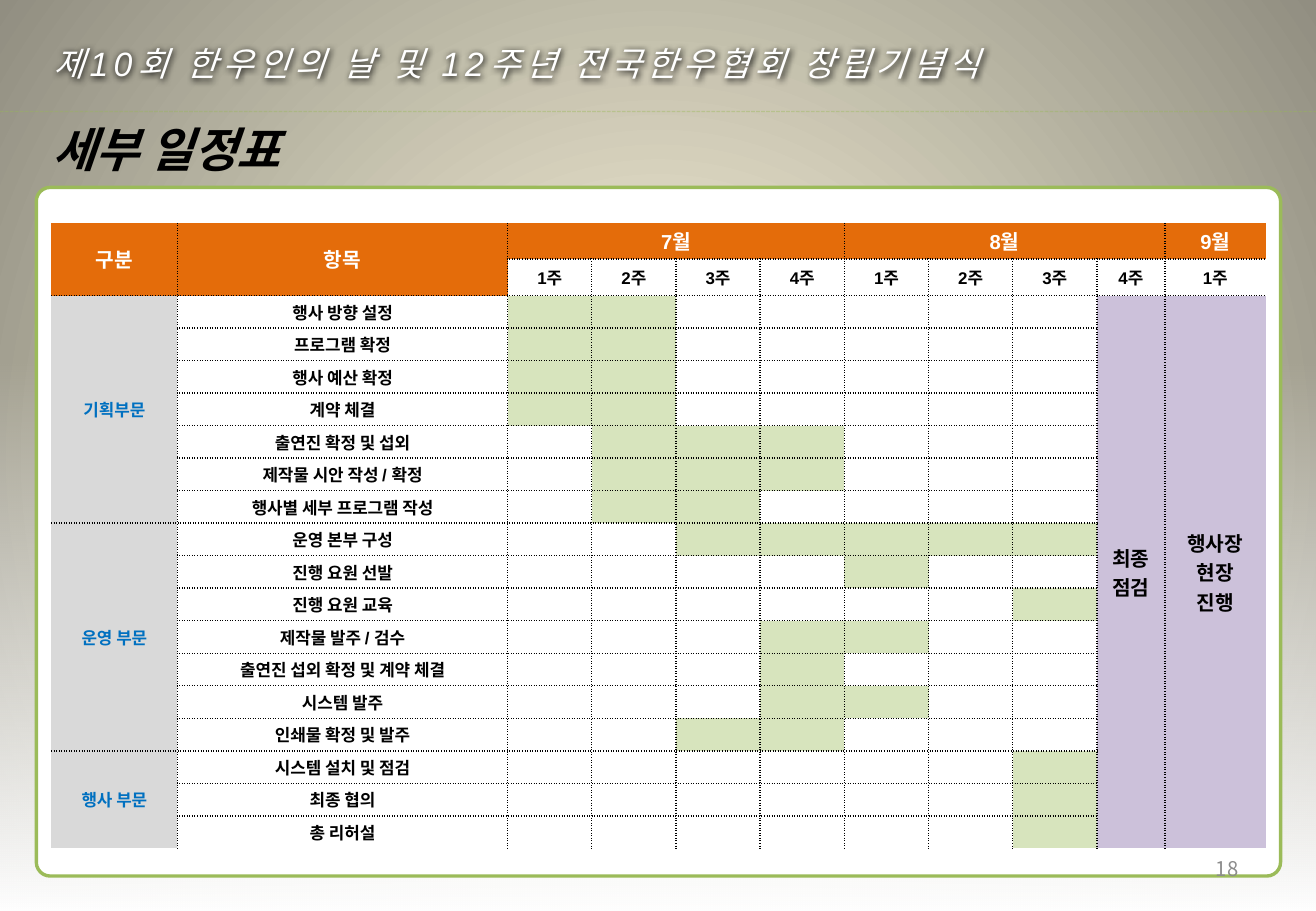
import pptx
import pptx.chart.data
import pptx.dml.color
import pptx.enum.dml
import pptx.enum.shapes
import pptx.enum.text
import pptx.oxml
import pptx.oxml.ns
import pptx.oxml.xmlchemy
import pptx.util

Cm = pptx.util.Cm
Pt = pptx.util.Pt
RGBColor = pptx.dml.color.RGBColor
qn = pptx.oxml.ns.qn
NAMESPACE = pptx.oxml.ns.nsdecls("a")
ALIGN = pptx.enum.text.PP_ALIGN
MIDDLE = pptx.enum.text.MSO_ANCHOR.MIDDLE
PRESET = pptx.enum.shapes.MSO_SHAPE

BLACK = RGBColor(0x00, 0x00, 0x00)
WHITE = RGBColor(0xFF, 0xFF, 0xFF)
ORANGE = RGBColor(0xE4, 0x6C, 0x0A)
GREEN = RGBColor(0x9B, 0xBB, 0x59)
RULE_GREEN = RGBColor(0x98, 0xB9, 0x55)
LIGHT_GREEN = RGBColor(0xD7, 0xE4, 0xBD)
LILAC = RGBColor(0xCC, 0xC1, 0xDA)
LIGHT_GREY = RGBColor(0xD9, 0xD9, 0xD9)
GREY = RGBColor(0x8C, 0x8C, 0x8C)
BLUE = RGBColor(0x00, 0x70, 0xC0)
CREAM = RGBColor(0xFC, 0xF7, 0xDD)
TAUPE = RGBColor(0x91, 0x8E, 0x81)


def write_text(frame, text, color, size, align, name="Arial", **font_values):
    """Fill a text frame, one paragraph per line of text."""
    frame.text = text
    values = {"size": Pt(size), "name": name, **font_values}
    for paragraph in frame.paragraphs:
        paragraph.alignment = align
        for run in paragraph.runs:
            for key, value in values.items():
                setattr(run.font, key, value)
            run.font.color.rgb = color
            east_asian = pptx.oxml.parse_xml(f'<a:ea {NAMESPACE} typeface="Noto Sans CJK KR"/>')
            run.font._element.find(qn("a:latin")).addnext(east_asian)


def apply_gradient(fill, parent, start, end, end_alpha, direction):
    fill.solid()
    gradient = pptx.oxml.parse_xml(
        f'<a:gradFill {NAMESPACE} rotWithShape="1"><a:gsLst>'
        f'<a:gs pos="0"><a:srgbClr val="{start}"/></a:gs>'
        f'<a:gs pos="100000"><a:srgbClr val="{end}"><a:alpha val="{end_alpha}"/></a:srgbClr></a:gs>'
        f"</a:gsLst>{direction}</a:gradFill>")
    parent.replace(parent.find(qn("a:solidFill")), gradient)


presentation = pptx.Presentation()
presentation.slide_width = Cm(27.51)
presentation.slide_height = Cm(19.05)
slide = presentation.slides.add_slide(presentation.slide_layouts[6])
shapes = slide.shapes

# Background, rule and white panel
background_fill = slide.background.fill
background_fill.solid()
apply_gradient(background_fill, slide._element.find(".//" + qn("p:bgPr")), CREAM, TAUPE, 100000,
               '<a:path path="circle"><a:fillToRect l="50000" t="50000" r="50000" b="50000"/></a:path>')

rule = shapes.add_connector(pptx.enum.shapes.MSO_CONNECTOR.STRAIGHT, 0, Cm(2.33), Cm(27.51), Cm(2.33))
rule.line.color.rgb = RULE_GREEN
rule.line.width = Pt(0.75)
rule.line.dash_style = pptx.enum.dml.MSO_LINE.SQUARE_DOT
rule_properties = rule._element.spPr
rule_properties.append(pptx.oxml.parse_xml(f"<a:effectLst {NAMESPACE}/>"))
rule_properties.find(".//" + qn("a:srgbClr")).append(
    pptx.oxml.parse_xml(f'<a:alpha {NAMESPACE} val="40000"/>'))

fade = shapes.add_shape(PRESET.RECTANGLE, 0, Cm(7.52), Cm(27.51), Cm(11.53))
fade.shadow.inherit = False
fade.line.fill.background()
apply_gradient(fade.fill, fade._element.spPr, WHITE, WHITE, 0, '<a:lin ang="16200000" scaled="0"/>')

panel = shapes.add_shape(PRESET.ROUNDED_RECTANGLE, Cm(0.76), Cm(3.92), Cm(26.01), Cm(14.4))
panel.shadow.inherit = False
panel.adjustments[0] = 0.02
panel.fill.solid()
panel.fill.fore_color.rgb = WHITE
panel.line.color.rgb = GREEN
panel.line.width = Pt(2)

# Headings and page number
heading = shapes.add_textbox(Cm(0.84), Cm(2.39), Cm(6.2), Cm(1.65))
write_text(heading.text_frame, "세부 일정표", BLACK, 28, ALIGN.LEFT, bold=True, italic=True)

page_number = shapes.add_textbox(Cm(19.71), Cm(17.65), Cm(6.43), Cm(1.02))
page_number.text_frame.vertical_anchor = MIDDLE
write_text(page_number.text_frame, "18", GREY, 12, ALIGN.RIGHT, name="Noto Sans CJK KR")

title = shapes.add_textbox(Cm(0.87), Cm(0.76), Cm(23.9), Cm(1.3))
title.text_frame.word_wrap = True
write_text(title.text_frame, "제10회 한우인의 날 및 12주년 전국한우협회 창립기념식",
           WHITE, 20, ALIGN.LEFT, italic=True)
title.text_frame.paragraphs[0].runs[0].font._element.set("spc", "300")
title._element.spPr.append(pptx.oxml.parse_xml(
    f'<a:effectLst {NAMESPACE}><a:outerShdw blurRad="50800" dist="12700" dir="2700000">'
    '<a:srgbClr val="000000"/></a:outerShdw></a:effectLst>'))

# Schedule: item, first busy week, last busy week (weeks count from 0)
sections = [
    ("기획부문", [
        ("행사 방향 설정", 0, 1), ("프로그램 확정", 0, 1), ("행사 예산 확정", 0, 1),
        ("계약 체결", 0, 1), ("출연진 확정 및 섭외", 1, 3),
        ("제작물 시안 작성 / 확정", 1, 3), ("행사별 세부 프로그램 작성", 1, 2)]),
    ("운영 부문", [
        ("운영 본부 구성", 2, 6), ("진행 요원 선발", 4, 4), ("진행 요원 교육", 6, 6),
        ("제작물 발주 / 검수", 3, 4), ("출연진 섭외 확정 및 계약 체결", 3, 3),
        ("시스템 발주", 3, 4), ("인쇄물 확정 및 발주", 2, 3)]),
    ("행사 부문", [
        ("시스템 설치 및 점검", 6, 6), ("최종 협의", 6, 6), ("총 리허설", 6, 6)]),
]
column_widths = [2.64, 6.9] + [1.76] * 7 + [1.42, 2.11]
row_heights = [0.76] * 2 + [0.68] * 17
row_count, column_count = len(row_heights), len(column_widths)

# Each entry: row, column, rows spanned, columns spanned, text, fill, text colour, size
entries = [
    (0, 0, 2, 1, "구분", ORANGE, WHITE, 12),
    (0, 1, 2, 1, "항목", ORANGE, WHITE, 12),
    (0, 2, 1, 4, "7월", ORANGE, WHITE, 12),
    (0, 6, 1, 4, "8월", ORANGE, WHITE, 12),
    (0, 10, 1, 1, "9월", ORANGE, WHITE, 12),
    (2, 9, 17, 1, "최종\n점검", LILAC, BLACK, 12),
    (2, 10, 17, 1, "행사장\n현장\n진행", LILAC, BLACK, 12),
]
for week in range(9):
    entries.append((1, 2 + week, 1, 1, f"{week % 4 + 1}주", WHITE, BLACK, 10))
row = 2
for section, items in sections:
    entries.append((row, 0, len(items), 1, section, LIGHT_GREY, BLUE, 10))
    for item, first_week, last_week in items:
        entries.append((row, 1, 1, 1, item, WHITE, BLACK, 10))
        for week in range(7):
            fill = LIGHT_GREEN if first_week <= week <= last_week else WHITE
            entries.append((row, 2 + week, 1, 1, "", fill, BLACK, 10))
        row += 1

table = shapes.add_table(row_count, column_count, Cm(1.07), Cm(4.66),
                         Cm(sum(column_widths)), Cm(sum(row_heights))).table
table.first_row = False
table.horz_banding = False
for column, width in zip(table.columns, column_widths):
    column.width = Cm(width)
for table_row, height in zip(table.rows, row_heights):
    table_row.height = Cm(height)

for row, column, rows, columns, text, fill, color, size in entries:
    cell = table.cell(row, column)
    if rows * columns > 1:
        cell.merge(table.cell(row + rows - 1, column + columns - 1))
    write_text(cell.text_frame, text, color, size, ALIGN.CENTER, bold=True)
    for covered_row in range(row, row + rows):
        for covered_column in range(column, column + columns):
            covered = table.cell(covered_row, covered_column)
            cell_format = {"vertical_anchor": MIDDLE, "margin_top": Cm(0.05), "margin_bottom": Cm(0.05)}
            for key, value in cell_format.items():
                setattr(covered, key, value)
            if not covered.text:
                covered.text_frame.paragraphs[0]._p.append(
                    pptx.oxml.parse_xml(f'<a:endParaRPr {NAMESPACE} sz="1000"/>'))
            inner_edges = {"lnL": column > 0, "lnR": column + columns < column_count,
                           "lnT": row > 0, "lnB": row + rows < row_count}
            for edge, is_inner in inner_edges.items():
                paint = (f'<a:solidFill><a:srgbClr val="{BLACK}"/></a:solidFill><a:prstDash val="sysDot"/>'
                         if is_inner else "<a:noFill/>")
                covered._tc.get_or_add_tcPr().append(
                    pptx.oxml.parse_xml(f'<a:{edge} {NAMESPACE} w="12700">{paint}</a:{edge}>'))
            covered.fill.solid()
            covered.fill.fore_color.rgb = fill

presentation.save("out.pptx")
